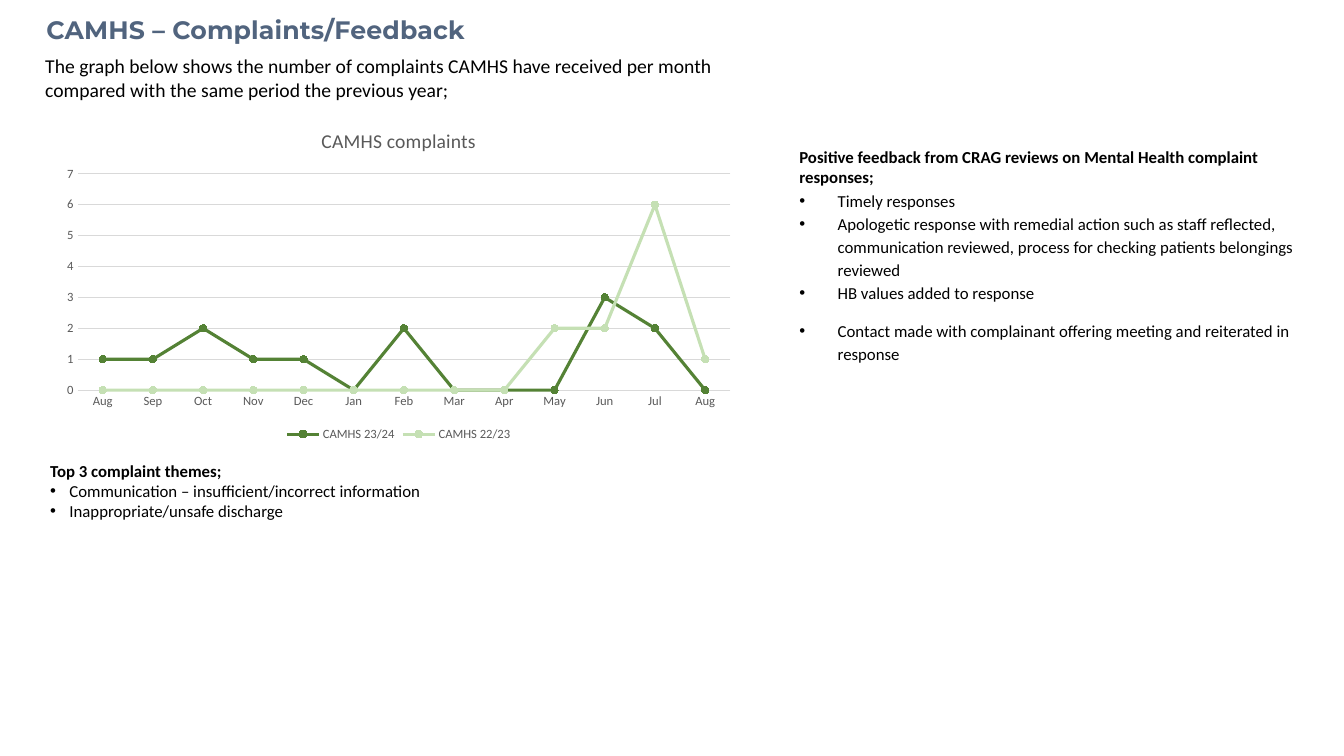
from dataclasses import dataclass

from lxml import etree
from pptx import Presentation, util as u
from pptx.chart.data import CategoryChartData
from pptx.dml.color import RGBColor
from pptx.enum import chart as ch, text as tx
from pptx.oxml.ns import qn


@dataclass(frozen=True)
class Theme:
    heading_font: str = "Montserrat"
    body_font: str = "Calibri"
    heading: str = "51647E"
    ink: str = "000000"
    muted: str = "595959"
    grid: str = "D9D9D9"
    this_year: str = "548235"
    last_year: str = "C5E0B4"
    heading_size: float = 18
    intro_size: float = 14
    body_size: float = 12
    axis_size: float = 9


def rgb(value):
    return RGBColor.from_string(value)


def style_font(font, name, size, color, bold=False):
    font.name, font.size, font.bold = name, u.Pt(size), bold
    font.color.rgb = rgb(color)


def write(paragraph, words, *, font, size, color, bold=False, tracking=None,
          line=1.0, before=0, after=0, bullet_indent=None, left=0):
    paragraph.alignment = tx.PP_ALIGN.LEFT
    paragraph.line_spacing = line
    paragraph.space_before, paragraph.space_after = u.Pt(before), u.Pt(after)
    run = paragraph.add_run()
    run.text = words
    style_font(run.font, font, size, color, bold)
    if tracking:
        run.font._element.set("spc", str(round(tracking * 100)))
    props = paragraph._p.get_or_add_pPr()
    props.set("marL", str(u.Inches(bullet_indent or left)))
    props.set("indent", str(-u.Inches(bullet_indent or 0)))
    if bullet_indent:
        etree.SubElement(props, qn("a:buFont"), typeface="Arial")
        etree.SubElement(props, qn("a:buChar"), char="•")


class FeedbackSlide:
    def __init__(self, deck, theme):
        self.theme = theme
        self.slide = deck.slides.add_slide(deck.slide_layouts[5])

    def prepare(self, box, area):
        box.left, box.top, box.width, box.height = map(u.Inches, area)
        frame = box.text_frame
        frame.word_wrap = True
        frame.auto_size = tx.MSO_AUTO_SIZE.NONE
        frame.vertical_anchor = tx.MSO_ANCHOR.TOP
        return frame

    def title(self, words, area):
        frame = self.prepare(self.slide.shapes.title, area)
        write(frame.paragraphs[0], words, font=self.theme.heading_font,
              size=self.theme.heading_size, color=self.theme.heading,
              bold=True, tracking=0.1, line=1.01, before=0.6, left=0.01)

    def passage(self, area, lead, points=(), size=None, bold=True, **point_style):
        box = self.slide.shapes.add_textbox(*map(u.Inches, area))
        frame = self.prepare(box, area)
        look = dict(font=self.theme.body_font, color=self.theme.ink,
                    size=size or self.theme.body_size)
        write(frame.paragraphs[0], lead, bold=bold, **look)
        for words, after in points:
            write(frame.add_paragraph(), words, after=after, **look, **point_style)

    def line_chart(self, area, heading, months, complaints):
        theme = self.theme
        data = CategoryChartData()
        data.categories = months
        for name, counts, _ in complaints:
            data.add_series(name, counts)
        chart = self.slide.shapes.add_chart(
            ch.XL_CHART_TYPE.LINE_MARKERS, *map(u.Inches, area), data).chart
        style_font(chart.font, theme.body_font, 10, theme.ink)
        chart.has_title = True
        caption = chart.chart_title.text_frame
        caption.text = heading
        style_font(caption.paragraphs[0].runs[0].font, theme.body_font,
                   theme.intro_size, theme.muted)
        chart.chart_title.include_in_layout = False
        chart.has_legend = True
        chart.legend.position = ch.XL_LEGEND_POSITION.BOTTOM
        chart.legend.include_in_layout = False
        style_font(chart.legend.font, theme.body_font, theme.axis_size, theme.muted)
        for axis in (chart.category_axis, chart.value_axis):
            axis.major_tick_mark = axis.minor_tick_mark = ch.XL_TICK_MARK.NONE
            style_font(axis.tick_labels.font, theme.body_font,
                       theme.axis_size, theme.muted)
        chart.value_axis.format.line.fill.background()
        chart.value_axis.has_major_gridlines = True
        for rule in (chart.category_axis.format.line,
                     chart.value_axis.major_gridlines.format.line):
            rule.color.rgb, rule.width = rgb(theme.grid), u.Pt(0.75)
        chart.plots[0].vary_by_categories = False
        for series, (_, _, color) in zip(chart.plots[0].series, complaints):
            series.smooth = False
            series.format.line.color.rgb = rgb(color)
            series.format.line.width = u.Pt(2.25)
            series.marker.style, series.marker.size = ch.XL_MARKER_STYLE.CIRCLE, 5
            series.marker.format.fill.solid()
            series.marker.format.fill.fore_color.rgb = rgb(color)
            series.marker.format.line.color.rgb = rgb(color)


def main():
    deck = Presentation()
    deck.slide_width, deck.slide_height = u.Inches(13.33), u.Inches(7.5)
    theme = Theme()
    page = FeedbackSlide(deck, theme)
    page.title("CAMHS – Complaints/Feedback", (0.35, 0.09, 9.69, 0.4))
    page.passage(
        (0.35, 0.49, 7.35, 0.57),
        "The graph below shows the number of complaints CAMHS have received "
        "per month compared with the same period the previous year;",
        size=theme.intro_size, bold=False)
    page.passage(
        (7.83, 1.41, 5.24, 2.26),
        "Positive feedback from CRAG reviews on Mental Health complaint responses;",
        [("Timely responses", 0),
         ("Apologetic response with remedial action such as staff reflected, "
          "communication reviewed, process for checking patients belongings "
          "reviewed", 0),
         ("HB values added to response", 10),
         ("Contact made with complainant offering meeting and reiterated in "
          "response", 10)],
        bullet_indent=0.38, line=1.15)
    page.passage(
        (0.4, 4.52, 6.67, 0.71), "Top 3 complaint themes;",
        [("Communication – insufficient/incorrect information", 0),
         ("Inappropriate/unsafe discharge", 0)],
        bullet_indent=0.19)
    page.line_chart(
        (0.53, 1.11, 6.85, 3.31), "CAMHS complaints",
        "Aug Sep Oct Nov Dec Jan Feb Mar Apr May Jun Jul Aug".split(),
        [("CAMHS 23/24", (1, 1, 2, 1, 1, 0, 2, 0, 0, 0, 3, 2, 0), theme.this_year),
         ("CAMHS 22/23", (0, 0, 0, 0, 0, 0, 0, 0, 0, 2, 2, 6, 1), theme.last_year)])
    deck.save("out.pptx")


if __name__ == "__main__":
    main()
